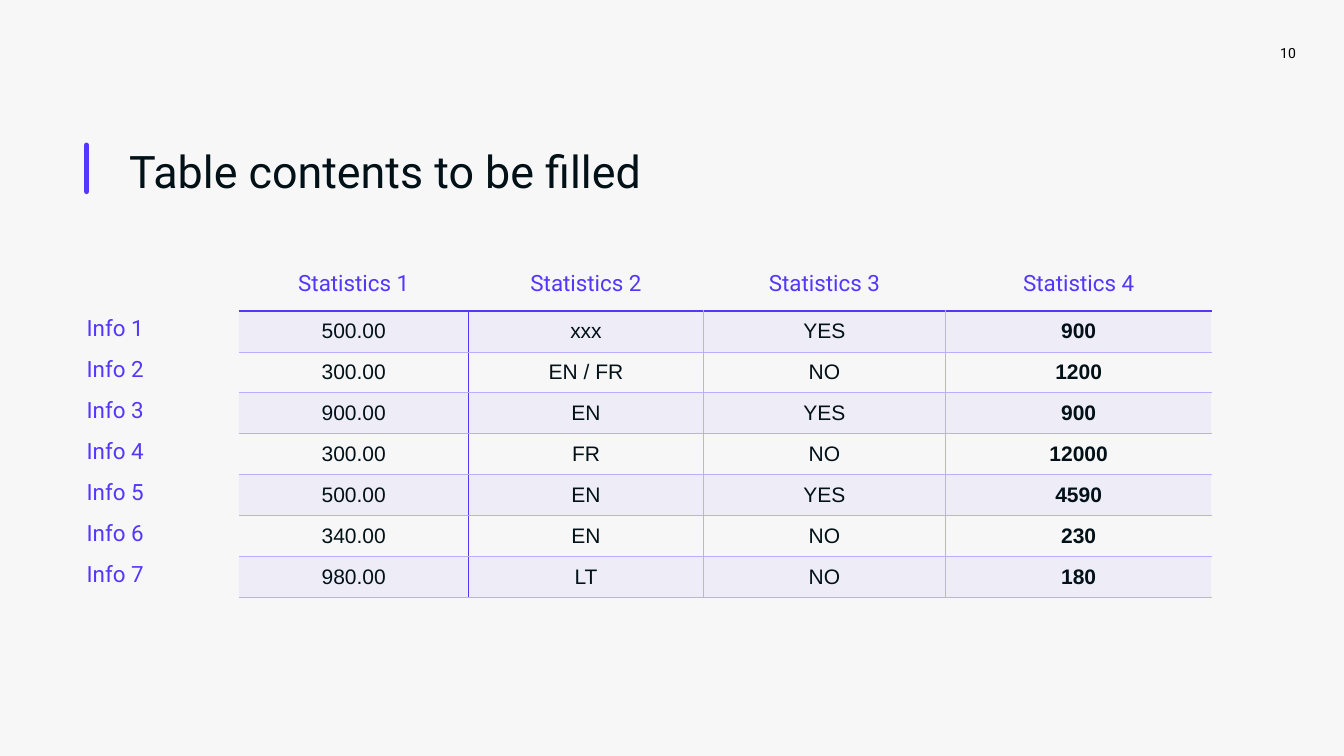
"""Build a slide with a titled statistics table."""
from lxml import etree
from pptx import Presentation
from pptx.dml.color import RGBColor
from pptx.enum.shapes import MSO_CONNECTOR
from pptx.enum.text import MSO_ANCHOR, MSO_AUTO_SIZE, PP_ALIGN
from pptx.oxml.ns import qn
from pptx.util import Pt

LEFT, MID, RIGHT = PP_ALIGN.LEFT, PP_ALIGN.CENTER, PP_ALIGN.RIGHT
TOP, CENTER = MSO_ANCHOR.TOP, MSO_ANCHOR.MIDDLE
STRAIGHT = MSO_CONNECTOR.STRAIGHT
FIXED = MSO_AUTO_SIZE.NONE
PLAIN = "{2D5ABB26-0587-4C30-8999-92F81FD0307C}"
COLORS = {"page": "F7F7F7", "ink": "011117", "accent": "5337FD",
          "pale": "BAAFFE", "black": "000000"}


def write(frame, text, size=16, color="accent", font="Roboto", bold=False,
          align=LEFT, spacing=None):
    """Put formatted text into a frame."""
    para = frame.paragraphs[0]
    para.alignment = align
    para.line_spacing = spacing
    run = para.add_run()
    run.text = text
    run.font.size = Pt(size)
    run.font.name = font
    run.font.bold = bold
    run.font.color.rgb = RGBColor.from_string(COLORS[color])


def edge(cell, side, color, width):
    """Draw one border of a cell."""
    line = etree.SubElement(cell._tc.get_or_add_tcPr(), qn("a:ln" + side),
                            w=str(Pt(width)))
    fill = etree.SubElement(line, qn("a:solidFill"))
    etree.SubElement(fill, qn("a:srgbClr"), val=COLORS[color])


deck = Presentation()
deck.slide_width, deck.slide_height = Pt(960), Pt(540)
slide = deck.slides.add_slide(deck.slide_layouts[5])
slide.background.fill.solid()
slide.background.fill.fore_color.rgb = RGBColor.from_string(COLORS["page"])

title = slide.shapes.title
title.left, title.top, title.width, title.height = Pt(85), Pt(103.7), Pt(781.2), Pt(33.8)
title.text_frame.auto_size = FIXED
title.text_frame.vertical_anchor = TOP
write(title.text_frame, "Table contents to be filled", size=32, color="ink", spacing=0.9)

HEADS = ["", "Statistics 1", "Statistics 2", "Statistics 3", "Statistics 4"]
ROWS = [
    ["Info 1", "500.00", "xxx", "YES", "900"],
    ["Info 2", "300.00", "EN / FR", "NO", "1200"],
    ["Info 3", "900.00", "EN", "YES", "900"],
    ["Info 4", "300.00", "FR", "NO", "12000"],
    ["Info 5", "500.00", "EN", "YES", "4590"],
    ["Info 6", "340.00", "EN", "NO", "230"],
    ["Info 7", "980.00", "LT", "NO", "180"],
]
WIDTHS = [108.8, 164, 167.8, 172.8, 190.4]
HEAD, ROW = 38.6, 29.22
LAST = len(WIDTHS) - 1
RULES = [None, ("accent", 0.5), ("pale", 1), ("pale", 1), ("page", 1)]

holder = slide.shapes.add_table(len(ROWS) + 1, len(WIDTHS), Pt(61.9), Pt(183.6),
                                Pt(sum(WIDTHS)), Pt(HEAD + ROW * len(ROWS)))
table = holder.table
table.first_row = table.horz_banding = False
table._tbl.tblPr.find(qn("a:tableStyleId")).text = PLAIN
for col, width in enumerate(WIDTHS):
    table.columns[col].width = Pt(width)

for row, texts in enumerate([HEADS] + ROWS):
    table.rows[row].height = Pt(ROW if row else HEAD)
    for col, text in enumerate(texts):
        cell = table.cell(row, col)
        frame = cell.text_frame
        if col == 0:
            cell.margin_left = 0
            if text:
                write(frame, text)
            cell.fill.background()
            continue
        cell.vertical_anchor = CENTER
        if row == 0:
            write(frame, text, align=MID)
        else:
            write(frame, text, size=15, color="ink", font="Arial",
                  bold=col == LAST, align=MID)
        if col > 1:
            edge(cell, "L", *(RULES[col - 1] if row else ("page", 1)))
        edge(cell, "R", *(RULES[col] if row else ("page", 1)))
        above = [("page", 1), ("accent", 1)]
        edge(cell, "T", *(above[row] if row < 2 else ("pale", 0.5)))
        edge(cell, "B", *(("pale", 0.5) if row else ("accent", 1)))
        if row % 2:
            cell.fill.solid()
            cell.fill.fore_color.rgb = RGBColor.from_string(COLORS["accent"])
            tint = cell._tc.tcPr.find(qn("a:solidFill"))[0]
            etree.SubElement(tint, qn("a:alpha"), val="5000")
        else:
            cell.fill.background()

bar = slide.shapes.add_connector(STRAIGHT, Pt(61.9), Pt(103.7), Pt(61.9), Pt(136.8))
bar.line.color.rgb = RGBColor.from_string(COLORS["accent"])
bar.line.width = Pt(3.75)
bar.line._ln.set("cap", "rnd")
etree.SubElement(bar._element.spPr, qn("a:effectLst"))

page = slide.shapes.add_textbox(Pt(884.2), Pt(31.7), Pt(43.9), Pt(19.4))
frame = page.text_frame
frame.word_wrap = True
frame.margin_top, frame.margin_right = 0, Pt(2.5)
write(frame, "10", size=10, color="black", align=RIGHT)

deck.save("out.pptx")
